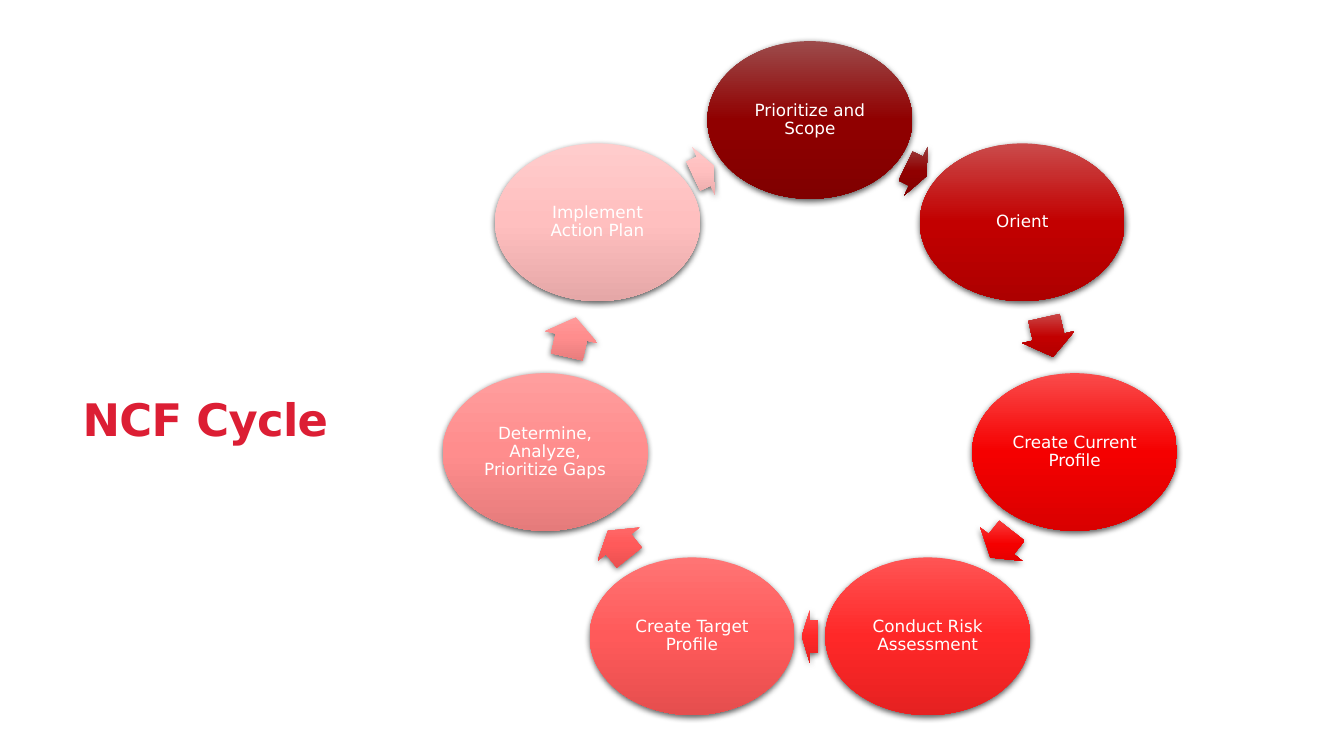
import copy
import math

import lxml.etree
import pptx
import pptx.dml.color
import pptx.enum.shapes
import pptx.enum.text
import pptx.oxml.ns
import pptx.util

Pt = pptx.util.Pt
RGB = pptx.dml.color.RGBColor
SHAPES = pptx.enum.shapes.MSO_SHAPE
qn = pptx.oxml.ns.qn

FONT = "DejaVu Sans"
CRIMSON = RGB(0xDC, 0x1E, 0x34)
WHITE = RGB(0xFF, 0xFF, 0xFF)

HEADING = "NCF Cycle"
STEPS = [
    ("Prioritize and Scope", ("9C4B4B", "900000", "800000"), 16.5),
    ("Orient", ("CA4B4B", "C20000", "AD0000"), 28.8),
    ("Create Current Profile", ("FA4B4B", "F50000", "D90000"), 24.5),
    ("Conduct Risk Assessment", ("FF5454", "FF2828", "E52121"), 11.5),
    ("Create Target Profile", ("FF7474", "FF5A5A", "E54E4E"), 24.5),
    ("Determine, Analyze, Prioritize Gaps", ("FF9E9E", "FF8D8D", "E57B7B"), 28.8),
    ("Implement Action Plan", ("FFCCCC", "FFBFBF", "E5A7A7"), 16.5),
]

CENTER_X, CENTER_Y, RADIUS = 578.5, 279.7, 194
STEP_W, STEP_H = 146.4, 112.6
ARROW_H = 38.2
TURN = 360 / len(STEPS)


def ring_point(degrees, radius):
    angle = math.radians(degrees)
    return CENTER_X + radius * math.sin(angle), CENTER_Y - radius * math.cos(angle)


def add_shaded(slide, kind, center, width, height, shades):
    x, y = center
    shape = slide.shapes.add_shape(
        kind, Pt(x - width / 2), Pt(y - height / 2), Pt(width), Pt(height))
    shape.fill.gradient()
    shape.fill.gradient_angle = 270
    gradient = shape.element.spPr.find(qn("a:gradFill"))
    gradient.set("rotWithShape", "0")
    stops = gradient.find(qn("a:gsLst"))
    stops.append(copy.deepcopy(stops[-1]))
    for stop, shade, position in zip(shape.fill.gradient_stops, shades, (0, 0.5, 1)):
        stop.color.rgb = RGB.from_string(shade)
        stop.position = position
    shape.line.fill.background()
    shape.shadow.inherit = False
    effects = shape.element.spPr.find(qn("a:effectLst"))
    shadow = lxml.etree.SubElement(
        effects, qn("a:outerShdw"), blurRad=str(Pt(4.5)), dist=str(Pt(1.5)),
        dir="5400000", algn="ctr", rotWithShape="0")
    black = lxml.etree.SubElement(shadow, qn("a:srgbClr"), val="000000")
    lxml.etree.SubElement(black, qn("a:alpha"), val="63000")
    return shape


def style_run(run, size, color):
    run.font.name = FONT
    run.font.size = Pt(size)
    run.font.color.rgb = color


def write_label(shape, label):
    frame = shape.text_frame
    frame.text = label
    frame.word_wrap = True
    frame.vertical_anchor = pptx.enum.text.MSO_ANCHOR.MIDDLE
    frame.margin_left = frame.margin_right = Pt(1.5)
    frame.margin_top = frame.margin_bottom = Pt(1.5)
    paragraph = frame.paragraphs[0]
    paragraph.alignment = pptx.enum.text.PP_ALIGN.CENTER
    paragraph.line_spacing = 0.9
    style_run(paragraph.runs[0], 12, WHITE)


def write_heading(slide):
    title = slide.shapes.title
    title.left, title.top, title.width, title.height = (
        Pt(51.8), Pt(259.2), Pt(749.5), Pt(84.2))
    title.text_frame.text = HEADING
    title.text_frame.vertical_anchor = pptx.enum.text.MSO_ANCHOR.MIDDLE
    paragraph = title.text_frame.paragraphs[0]
    paragraph.alignment = pptx.enum.text.PP_ALIGN.LEFT
    paragraph.line_spacing = 0.9
    run = paragraph.runs[0]
    style_run(run, 32, CRIMSON)
    run.font.bold = True
    run.font._element.set("spc", "-50")


def main():
    deck = pptx.Presentation()
    deck.slide_width, deck.slide_height = Pt(960), Pt(540)
    slide = deck.slides.add_slide(deck.slide_layouts[5])
    write_heading(slide)
    arrow_radius = RADIUS * math.cos(math.radians(TURN / 2))
    for index, (label, shades, arrow_w) in enumerate(STEPS):
        step = add_shaded(slide, SHAPES.OVAL, ring_point(index * TURN, RADIUS),
                          STEP_W, STEP_H, shades)
        write_label(step, label)
        heading_angle = (index + 0.5) * TURN
        arrow = add_shaded(slide, SHAPES.RIGHT_ARROW,
                           ring_point(heading_angle, arrow_radius),
                           arrow_w, ARROW_H, shades)
        arrow.adjustments[0] = 0.6
        arrow.adjustments[1] = 0.5
        arrow.rotation = heading_angle
    deck.save("out.pptx")


if __name__ == "__main__":
    main()
